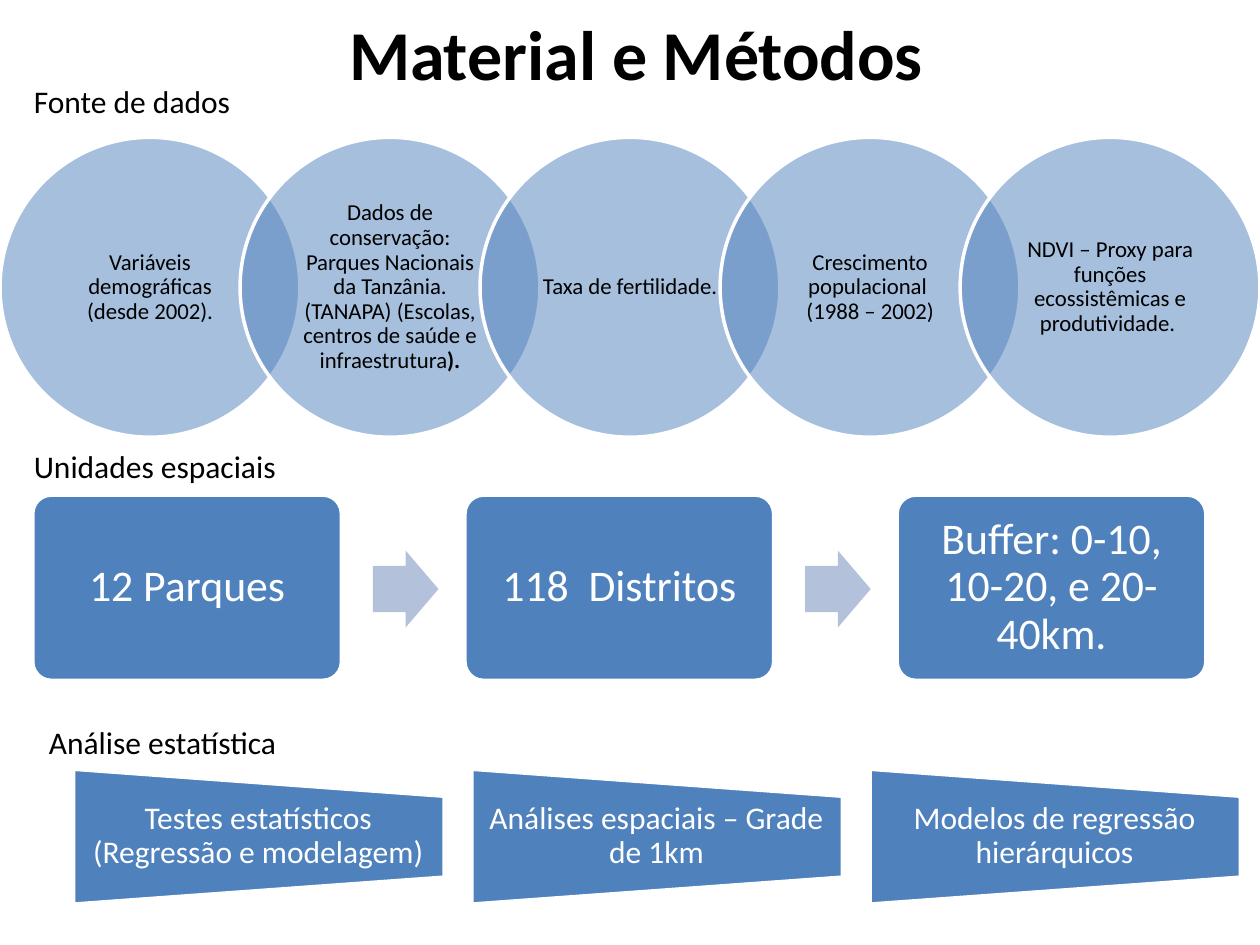
from pptx import Presentation
from pptx.dml.color import RGBColor
from pptx.enum.shapes import MSO_SHAPE as Shape
from pptx.enum.text import MSO_ANCHOR as Anchor, PP_ALIGN as Align
from pptx.oxml.ns import qn
from pptx.util import Inches, Pt
from lxml import etree

BLUE, WHITE, BLACK = "4F81BD", "FFFFFF", "000000"


def add_box(kind, left, top, width, height, fill=BLUE, outlined=True):
    shape = slide.shapes.add_shape(
        kind, Inches(left), Inches(top), Inches(width), Inches(height))
    shape.shadow.inherit = False
    shape.fill.solid()
    shape.fill.fore_color.rgb = RGBColor.from_string(fill)
    if outlined:
        shape.line.color.rgb = RGBColor.from_string(WHITE)
        shape.line.width = Pt(2)
    else:
        shape.line.fill.background()
    return shape


def write(shape, text, size, color, insets=None, bold_end=""):
    """Insets (horizontal, vertical) give centred text; without them it is a plain label."""
    frame = shape.text_frame
    frame.word_wrap = insets is not None
    paragraph = frame.paragraphs[0]
    paragraph.add_run().text = text
    if bold_end:
        run = paragraph.add_run()
        run.text = bold_end
        run.font.bold = True
    paragraph.font.name = "Calibri"
    paragraph.font.size = Pt(size)
    paragraph.font.color.rgb = RGBColor.from_string(color)
    paragraph.alignment = Align.LEFT
    frame.vertical_anchor = Anchor.TOP
    if insets:
        frame.margin_left = frame.margin_right = Inches(insets[0])
        frame.margin_top = frame.margin_bottom = Inches(insets[1])
        frame.vertical_anchor = Anchor.MIDDLE
        paragraph.alignment = Align.CENTER
        paragraph.line_spacing = 0.9
    return paragraph


presentation = Presentation()
presentation.slide_width, presentation.slide_height = Inches(10), Inches(7.5)
slide = presentation.slides.add_slide(presentation.slide_layouts[5])

# Title
title = slide.shapes.title
title.left, title.top = Inches(2.67), Inches(0.03)
title.width, title.height = Inches(4.94), Inches(0.77)
write(title, "Material e Métodos", 40, BLACK).font.bold = True

# Section labels
for text, left, top, width in [
    ("Fonte de dados", 0.17, 0.6, 1.78),
    ("Unidades espaciais", 0.17, 3.5, 2.2),
    ("Análise estatística", 0.29, 5.69, 2.03),
]:
    label = slide.shapes.add_textbox(
        Inches(left), Inches(top), Inches(width), Inches(0.4))
    write(label, text, 18, BLACK)

# Data sources: overlapping translucent circles across the slide
diameter = 2.38
sources = [
    ("Variáveis demográficas (desde 2002).", ""),
    ("Dados de conservação: Parques Nacionais da Tanzânia. (TANAPA) "
     "(Escolas, centros de saúde e infraestrutura", ")."),
    ("Taxa de fertilidade.", ""),
    ("Crescimento populacional  (1988 – 2002)", ""),
    ("NDVI – Proxy para funções ecossistêmicas e produtividade. ", ""),
]
circle_step = (10 - diameter) / (len(sources) - 1)
for index, (text, bold_end) in enumerate(sources):
    circle = add_box(Shape.OVAL, index * circle_step, 1.09, diameter, diameter)
    color = circle.fill._xPr.find(qn("a:solidFill"))[0]
    etree.SubElement(color, qn("a:alpha"), val="50000")
    write(circle, text, 13, BLACK, (0.13, 0.02), bold_end)

# Spatial units: boxes joined by block arrows
units = ["12 Parques", "118  Distritos", "Buffer: 0-10, 10-20, e 20-40km."]
for index, text in enumerate(units):
    left = 0.26 + index * 3.43
    unit = add_box(Shape.ROUNDED_RECTANGLE, left, 3.93, 2.45, 1.47)
    unit.adjustments[0] = 0.1
    write(unit, text, 25, WHITE, (0.1, 0.1))
    if index < len(units) - 1:
        arrow = add_box(Shape.RIGHT_ARROW, left + 2.7, 4.37, 0.52, 0.61,
                        "B3C1DB", outlined=False)
        arrow.adjustments[0] = 0.6

# Statistical analysis: trapezoids turned on their side, with upright text
analyses = [
    "Testes estatísticos (Regressão e modelagem)",
    "Análises espaciais – Grade de 1km",
    "Modelos de regressão hierárquicos",
]
for index, text in enumerate(analyses):
    offset = index * 3.16
    trapezoid = add_box(Shape.FLOWCHART_MANUAL_OPERATION, 1.52 + offset, 5.17, 1.07, 2.94)
    trapezoid.rotation = 270
    caption = slide.shapes.add_textbox(
        Inches(0.58 + offset), Inches(6.32), Inches(2.94), Inches(0.64))
    write(caption, text, 18, WHITE, (0.12, 0))

presentation.save("out.pptx")
